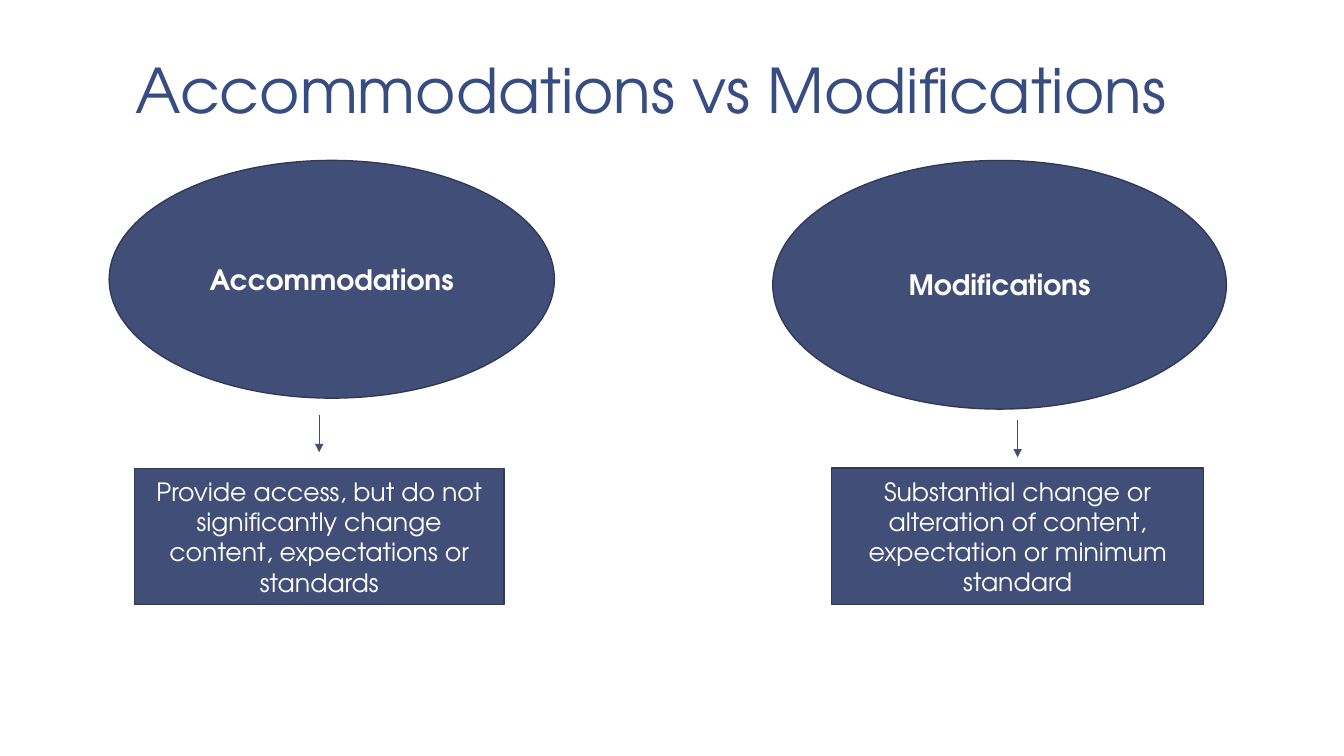
from lxml.etree import SubElement
from pptx import Presentation
from pptx.dml.color import RGBColor
from pptx.enum.shapes import MSO_CONNECTOR as Line, MSO_SHAPE as Preset
from pptx.enum.text import MSO_ANCHOR as Anchor, PP_ALIGN as Align
from pptx.oxml.ns import qn
from pptx.util import Inches, Pt

COLORS = {"title": "374C81", "panel": "414E77", "edge": "303A58", "light": "FFFFFF"}
FONT = "TeX Gyre Adventor"
GRID_COLUMNS, GRID_ROWS = 160, 90
ARROW_ROWS = 4.5

deck = Presentation()
deck.slide_width, deck.slide_height = Inches(13.33), Inches(7.5)


def color(name):
    return RGBColor.from_string(COLORS[name])


def col(count):
    return round(deck.slide_width * count / GRID_COLUMNS)


def row(count):
    return round(deck.slide_height * count / GRID_ROWS)


def write(shape, text, size=18, ink="light", bold=False, align=Align.CENTER,
          anchor=Anchor.MIDDLE, spacing=1.0):
    frame = shape.text_frame
    frame.word_wrap = True
    frame.vertical_anchor = anchor
    frame.text = text
    paragraph = frame.paragraphs[0]
    paragraph.alignment = align
    paragraph.line_spacing = spacing
    font = paragraph.runs[0].font
    font.name, font.size, font.bold = FONT, Pt(size), bold
    font.color.rgb = color(ink)


def add_title(slide, box, text):
    left, top, width, height = box
    title = slide.shapes.title
    title.left, title.top, title.width, title.height = col(left), row(top), col(width), row(height)
    write(title, text, size=44, ink="title", align=Align.LEFT, anchor=Anchor.BOTTOM, spacing=0.85)
    frame = title.text_frame
    frame.margin_left = frame.margin_right = Inches(0.13)
    frame.margin_top = frame.margin_bottom = Inches(0.07)


def add_panel(slide, preset, box, text, **style):
    left, top, width, height = box
    panel = slide.shapes.add_shape(preset, col(left), row(top), col(width), row(height))
    panel.shadow.inherit = False
    panel.fill.solid()
    panel.fill.fore_color.rgb = color("panel")
    panel.line.color.rgb = color("edge")
    panel.line.width = Pt(1)
    write(panel, text, **style)


def add_arrow(slide, center, start, end):
    arrow = slide.shapes.add_connector(Line.STRAIGHT, col(center), row(start), col(center), row(end))
    arrow.line.color.rgb = color("panel")
    arrow.line.width = Pt(0.5)
    SubElement(arrow.line._get_or_add_ln(), qn("a:tailEnd"), type="triangle")
    SubElement(arrow._element.spPr, qn("a:effectLst"))


def add_concept(slide, box, term, meaning, term_rows, meaning_rows, meaning_indent, meaning_columns):
    left, top, width, height = box
    meaning_left = left + meaning_indent
    meaning_top = top + height - meaning_rows
    gap_middle = (top + term_rows + meaning_top) / 2
    add_panel(slide, Preset.OVAL, (left, top, width, term_rows), term, size=20, bold=True)
    add_panel(slide, Preset.RECTANGLE,
              (meaning_left, meaning_top, meaning_columns, meaning_rows), meaning)
    add_arrow(slide, meaning_left + meaning_columns / 2,
              gap_middle - ARROW_ROWS / 2, gap_middle + ARROW_ROWS / 2)


def build_comparison():
    slide = deck.slides.add_slide(deck.slide_layouts[5])
    add_title(slide, (14.6, 1, 133.4, 14.9), "Accommodations vs Modifications")
    add_concept(slide, (13, 19.1, 53, 52.9), "Accommodations",
                "Provide access, but do not significantly change content, expectations or standards",
                term_rows=28.3, meaning_rows=16.2, meaning_indent=3, meaning_columns=44)
    add_concept(slide, (92, 19.1, 54, 52.9), "Modifications",
                "Substantial change or alteration of content, expectation or minimum standard",
                term_rows=29.6, meaning_rows=16.3, meaning_indent=7, meaning_columns=44.3)


if __name__ == "__main__":
    build_comparison()
    deck.save("out.pptx")
